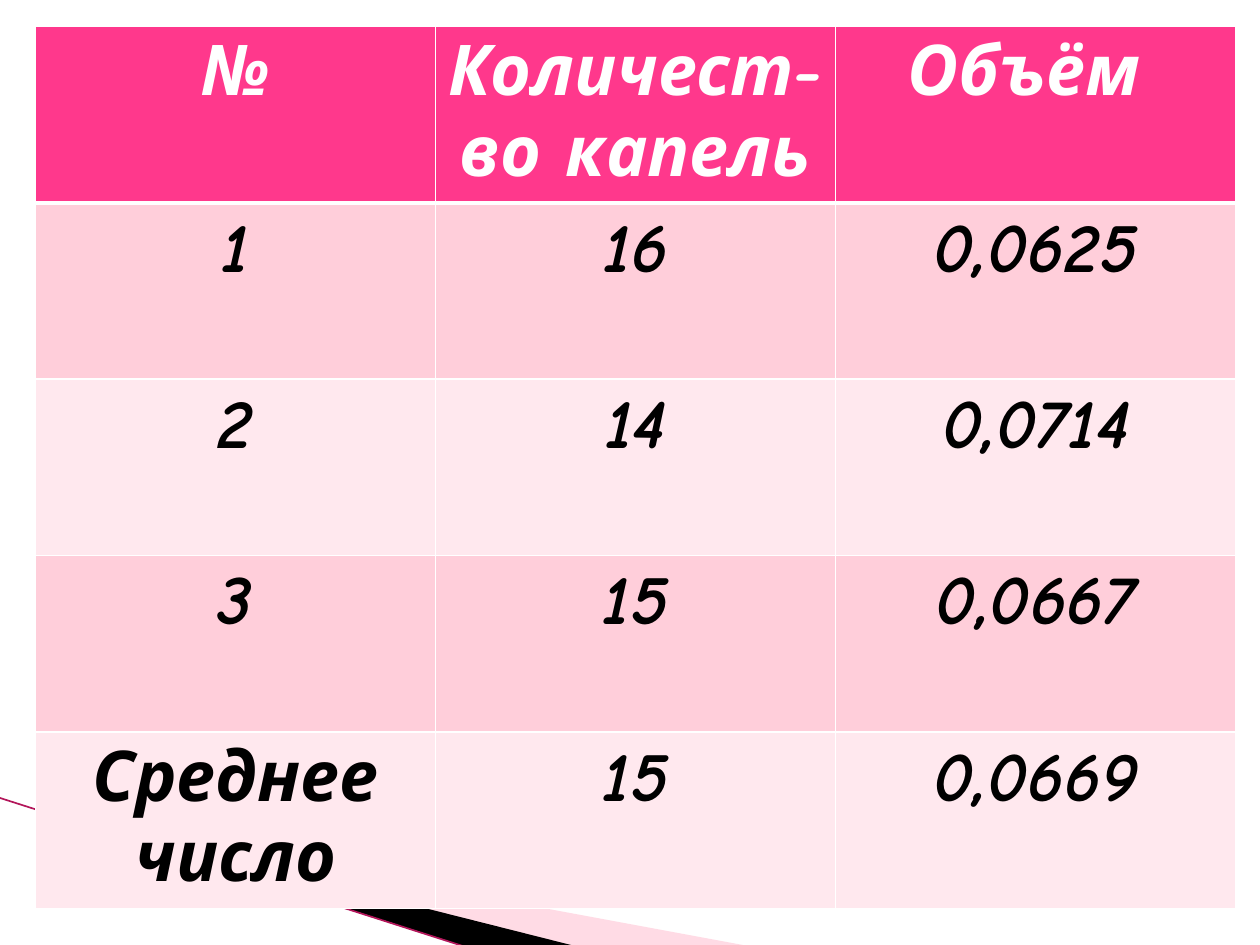
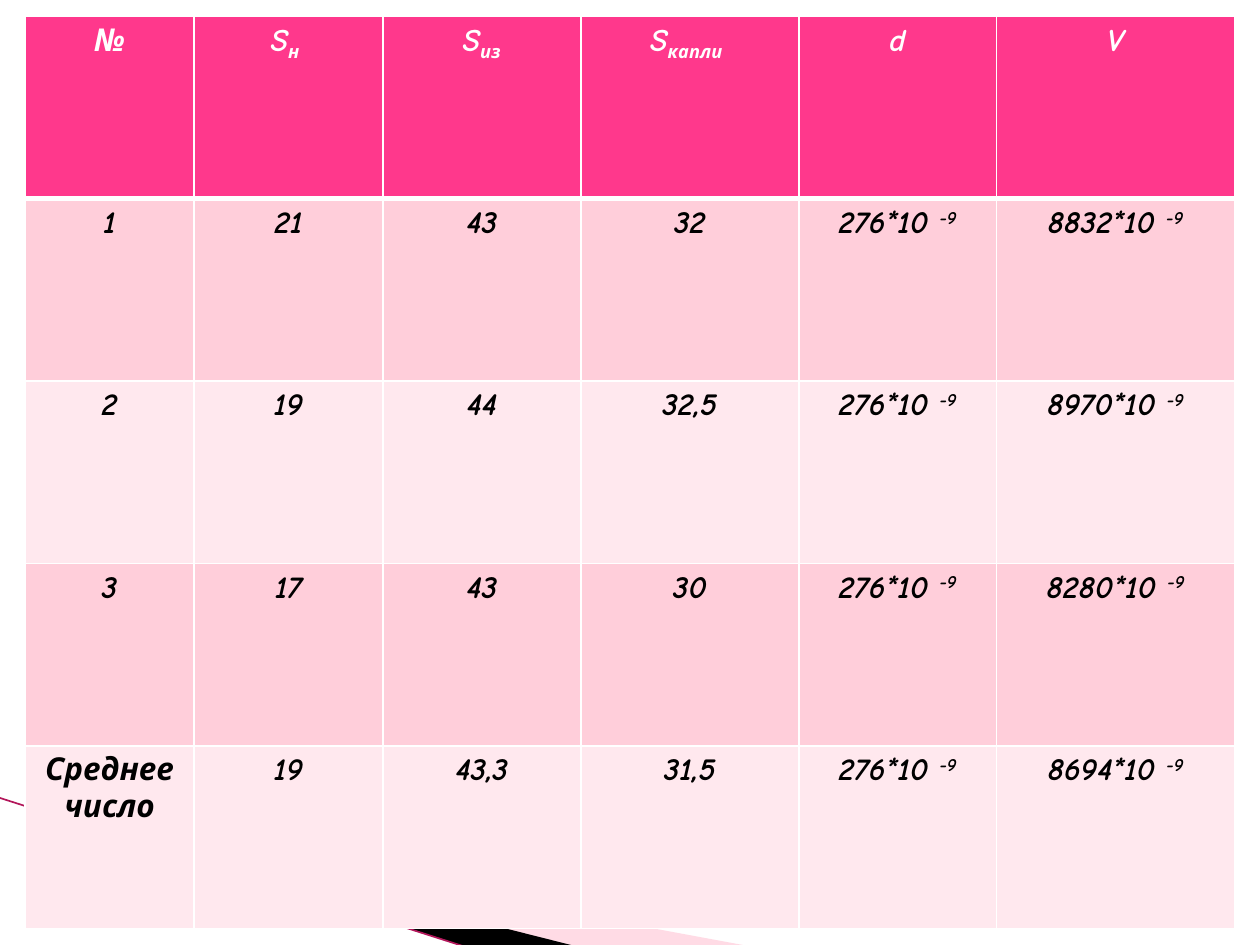
from lxml import etree
from pptx import Presentation, util as u
from pptx.dml.color import RGBColor
from pptx.enum import shapes, text
from pptx.oxml import ns

FONT = "Comic Neue"
WHITE, BLACK = "FFFFFF", "000000"
HEAD, DARK, LIGHT = "FF388C", "FFCEDA", "FFE8EE"
ROSE, EDGE = "FFA5BF", "B3165A"
BASES = {"_": "-25000", "^": "30000"}

DROPS = [
    ["№", "Количест-во капель", "Объём "],
    ["1", "16", "0,0625"],
    ["2", "14", "0,0714"],
    ["3", "15", "0,0667"],
    ["Среднее число", "15", "0,0669"],
]
POWER = "276*10 ^-9"
AREAS = [
    ["№", "S_н ", "S_из", "S_капли ", "d", "V"],
    ["1", "21", "43", "32", POWER, "8832*10 ^-9"],
    ["2", "19", "44", "32,5", POWER, "8970*10 ^-9"],
    ["3", "17", "43", "30", POWER, "8280*10 ^-9"],
    ["Среднее число", "19", "43,3", "31,5", POWER, "8694*10 ^-9"],
]


def paint(fmt, color):
    """Give a fill format a solid colour."""
    fmt.solid()
    fmt.fore_color.rgb = RGBColor.from_string(color)


def add_child(node, tag, **attrs):
    """Append a drawing element to a node."""
    return etree.SubElement(node, ns.qn(tag), attrs)


def add_band(slide, points, color, alpha=None):
    """Draw a filled sliver through points given in inches."""
    pts = [(u.Inches(x), u.Inches(y)) for x, y in points]
    pen = slide.shapes.build_freeform(*pts[0])
    pen.add_line_segments(pts[1:])
    band = pen.convert_to_shape()
    band.shadow.inherit = False
    band.line.fill.background()
    paint(band.fill, color)
    if alpha:
        tone = band.fill._xPr.find(".//" + ns.qn("a:srgbClr"))
        add_child(tone, "a:alpha", val=str(alpha * 1000))


def add_decor(slide):
    """Draw the shared slanting bands at the foot of a slide."""
    add_band(slide, [(0.55, 6.51), (5.95, 7.51), (4.56, 7.51), (0.55, 6.5)], ROSE, 40)
    add_band(slide, [(0.53, 6.49), (4.57, 7.51), (3.72, 7.52), (0.54, 6.5)], BLACK)
    ends = [u.Inches(n) for n in (-0.01, 6.33, 3.71, 7.52)]
    edge = slide.shapes.add_connector(shapes.MSO_CONNECTOR.STRAIGHT, *ends)
    paint(edge.line.fill, EDGE)
    edge.line.width = u.Pt(0.95)
    add_child(edge._element.spPr, "a:effectLst")


def add_run(para, words, size, color, base=None):
    """Add one bold italic run, raised or lowered by base."""
    run = para.add_run()
    run.text = words
    font = run.font
    font.name, font.size = FONT, u.Pt(size)
    font.bold = font.italic = True
    paint(font.fill, color)
    if base:
        run._r.get_or_add_rPr().set("baseline", base)


def add_edges(cell, row):
    """Rule a cell in white, with a thick line under the header."""
    props = cell._tc.get_or_add_tcPr()
    thick = {"T": row == 1, "B": row == 0}
    for spot, side in enumerate("LRTB"):
        width = u.Pt(3 if thick.get(side) else 1)
        line = add_child(props, "a:ln" + side, w=str(width))
        add_child(add_child(line, "a:solidFill"), "a:srgbClr", val=WHITE)
        props.insert(spot, line)


def fill_cell(cell, words, size, row):
    """Colour, rule and write one cell; _ lowers and ^ raises the tail."""
    paint(cell.fill, HEAD if row == 0 else DARK if row % 2 else LIGHT)
    add_edges(cell, row)
    para = cell.text_frame.paragraphs[0]
    para.alignment = text.PP_ALIGN.CENTER
    color = BLACK if row else WHITE
    mark = next((m for m in BASES if m in words), None)
    stem, tail = words.split(mark) if mark else (words, "")
    add_run(para, stem, size, color)
    if tail:
        add_run(para, tail, size, color, BASES[mark])


def add_grid(slide, rows, box, widths, size):
    """Place a table in a box, with equal rows and given column widths."""
    frame = slide.shapes.add_table(len(rows), len(widths), *map(u.Inches, box))
    table = frame.table
    for col, width in zip(table.columns, widths):
        col.width = u.Inches(width)
    for r, row in enumerate(rows):
        table.rows[r].height = u.Inches(box[3] / len(rows))
        for c, words in enumerate(row):
            fill_cell(table.cell(r, c), words, size, r)


def add_page(deck, *grid):
    """Add a slide with the shared bands and one table."""
    slide = deck.slides.add_slide(deck.slide_layouts[6])
    paint(slide.background.fill, WHITE)
    add_decor(slide)
    add_grid(slide, *grid)


def main():
    """Build and save the deck."""
    deck = Presentation()
    deck.slide_width, deck.slide_height = u.Inches(10), u.Inches(7.5)
    add_page(deck, DROPS, (0.28, 0.21, 9.53, 7), [9.53 / 3] * 3, 40)
    add_page(deck, AREAS, (0.2, 0.13, 9.6, 7.24), [1.34, 1.5, 1.57, 1.73, 1.57, 1.89], 18)
    deck.save("out.pptx")


if __name__ == "__main__":
    main()
